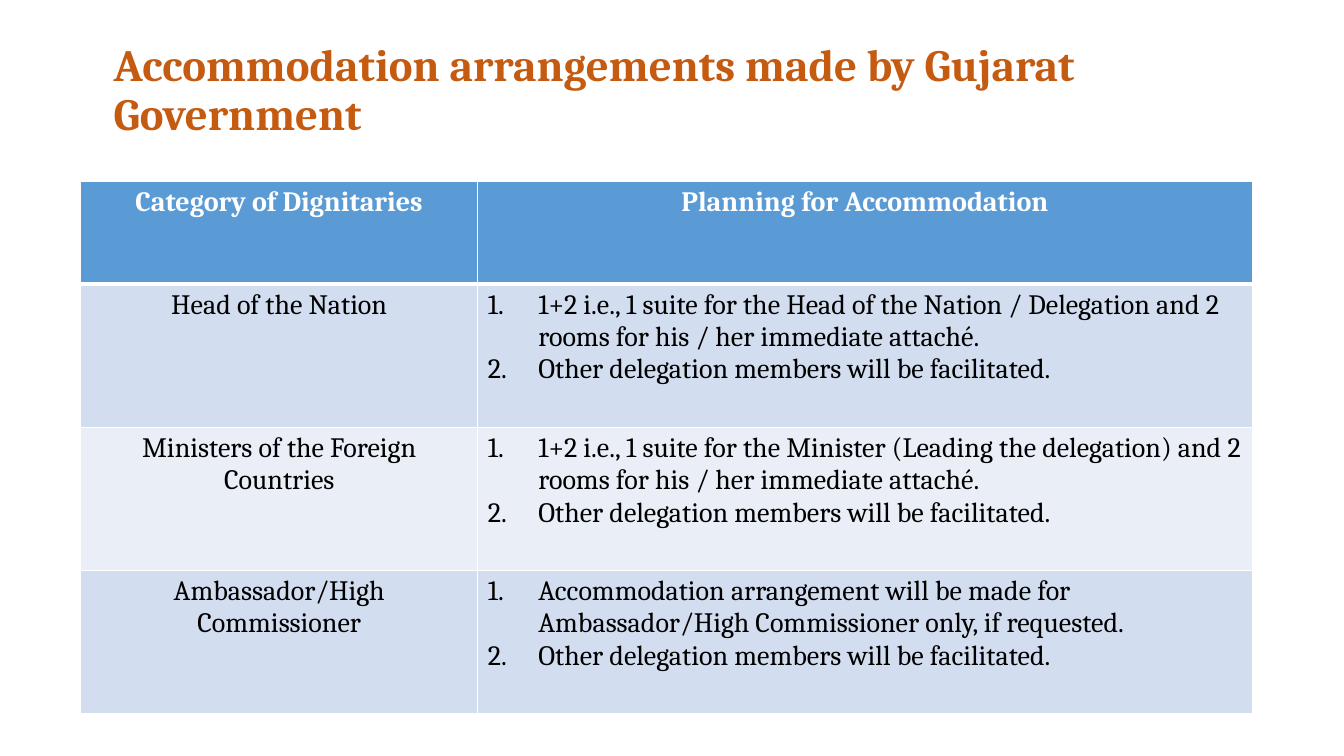
from lxml import etree
from pptx import Presentation
from pptx.dml.color import RGBColor
from pptx.enum import text
from pptx.oxml import ns
from pptx.util import Inches, Pt

FONT = "Cambria"
ORANGE = RGBColor(0xC5, 0x5A, 0x11)
BLUE = RGBColor(0x5B, 0x9B, 0xD5)
BANDS = [RGBColor(0xD2, 0xDE, 0xEF), RGBColor(0xEA, 0xEF, 0xF7)]
WHITE = RGBColor(0xFF, 0xFF, 0xFF)
BLACK = RGBColor(0x00, 0x00, 0x00)

TITLE = "Accommodation arrangements made by Gujarat Government"
HEADINGS = ["Category of Dignitaries", "Planning for Accommodation"]
OTHERS = "Other delegation members will be facilitated."
ARRANGEMENTS = [
    ("Head of the Nation",
     "1+2 i.e., 1 suite for the Head of the Nation / Delegation and 2 rooms "
     "for his / her immediate attaché."),
    ("Ministers of the Foreign Countries",
     "1+2 i.e., 1 suite for the Minister (Leading the delegation) and 2 rooms "
     "for his / her immediate attaché."),
    ("Ambassador/High Commissioner",
     "Accommodation arrangement will be made for Ambassador/High Commissioner "
     "only, if requested."),
]
COLUMN_WIDTHS = [3.94, 7.68]
HEADER_HEIGHT = 1.02


def format_runs(paragraph, size, color, bold=False):
    for run in paragraph.runs:
        run.font.name = FONT
        run.font.size = Pt(size)
        run.font.bold = bold
        run.font.color.rgb = color


def number_paragraph(paragraph):
    properties = paragraph._p.get_or_add_pPr()
    properties.set("marL", str(Inches(0.5)))
    properties.set("indent", str(-Inches(0.5)))
    etree.SubElement(properties, ns.qn("a:buFont"), typeface="+mj-lt")
    etree.SubElement(properties, ns.qn("a:buAutoNum"), type="arabicPeriod")


def set_borders(cell, top, bottom):
    properties = cell._tc.get_or_add_tcPr()
    for side, width in (("L", 1), ("R", 1), ("T", top), ("B", bottom)):
        line = etree.SubElement(properties, ns.qn(f"a:ln{side}"), w=str(Pt(width)))
        fill = etree.SubElement(line, ns.qn("a:solidFill"))
        etree.SubElement(fill, ns.qn("a:srgbClr"), val=str(WHITE))


def fill_cell(cell, lines, fill, color, bold=False, numbered=False, top=1, bottom=1):
    set_borders(cell, top, bottom)
    cell.fill.solid()
    cell.fill.fore_color.rgb = fill
    cell.text_frame.text = "\n".join(lines)
    for paragraph in cell.text_frame.paragraphs:
        if numbered:
            number_paragraph(paragraph)
        else:
            paragraph.alignment = text.PP_ALIGN.CENTER
        format_runs(paragraph, 20, color, bold)


def add_title(slide, left, top, width, height):
    box = slide.shapes.add_textbox(Inches(left), Inches(top), Inches(width), Inches(height))
    box.text_frame.word_wrap = True
    box.text_frame.text = TITLE
    paragraph = box.text_frame.paragraphs[0]
    paragraph.line_spacing = 0.9
    format_runs(paragraph, 32, ORANGE, bold=True)


def add_arrangements_table(slide, left, top, width, height):
    table = slide.shapes.add_table(
        len(ARRANGEMENTS) + 1, len(HEADINGS),
        Inches(left), Inches(top), Inches(width), Inches(height)).table
    for column, column_width in zip(table.columns, COLUMN_WIDTHS):
        column.width = Inches(column_width)
    body_height = (height - HEADER_HEIGHT) / len(ARRANGEMENTS)
    for index, row in enumerate(table.rows):
        row.height = Inches(body_height if index else HEADER_HEIGHT)

    # Header row
    for index, heading in enumerate(HEADINGS):
        fill_cell(table.cell(0, index), [heading], BLUE, WHITE, bold=True, bottom=3)

    # Banded body rows
    for index, (category, plan) in enumerate(ARRANGEMENTS):
        band = BANDS[index % 2]
        top_border = 1 if index else 3
        fill_cell(table.cell(index + 1, 0), [category], band, BLACK, top=top_border)
        fill_cell(table.cell(index + 1, 1), [plan, OTHERS], band, BLACK,
                  numbered=True, top=top_border)


def main():
    presentation = Presentation()
    presentation.slide_width = Inches(13.33)
    presentation.slide_height = Inches(7.5)
    slide = presentation.slides.add_slide(presentation.slide_layouts[6])
    add_title(slide, 1.03, 0.38, 10.94, 0.59)
    add_arrangements_table(slide, 0.8, 1.8, sum(COLUMN_WIDTHS), 5.28)
    presentation.save("out.pptx")


if __name__ == "__main__":
    main()
